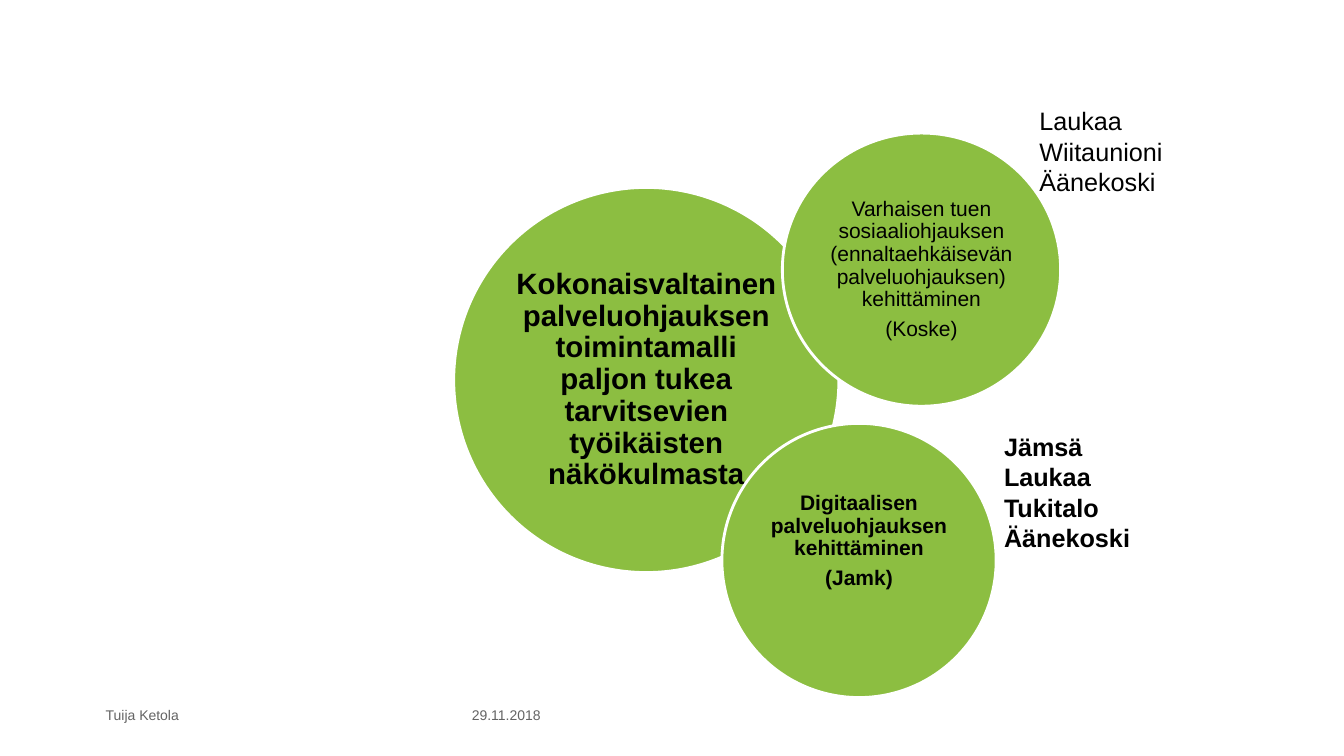
from pptx import Presentation
from pptx.dml.color import RGBColor
from pptx.enum.shapes import MSO_SHAPE
from pptx.enum.text import MSO_ANCHOR, PP_ALIGN
from pptx.util import Inches, Pt

FONT = "Arial"
COLORS = {"green": "8CBE41", "white": "FFFFFF", "black": "000000", "grey": "646464"}

# Circles: place (left, top, width, height), paragraphs, size, bold, inset, bottom inset
CIRCLES = [
    ((4.5, 1.86, 3.82, 3.82),
     ["Kokonaisvaltainen palveluohjauksen toimintamalli paljon tukea "
      "tarvitsevien työikäisten näkökulmasta"], 21, True, 0.03, 0.03),
    ((7.76, 1.32, 2.76, 2.71),
     ["Varhaisen tuen sosiaaliohjauksen (ennaltaehkäisevän palveluohjauksen) kehittäminen",
      "(Koske)"], 15, False, 0.02, 0.02),
    ((7.16, 4.2, 2.72, 2.72),
     ["Digitaalisen palveluohjauksen kehittäminen", "(Jamk)"], 15, True, 0.02, 0.4),
]

# Municipalities beside the circles: place, lines, bold
PLACES = [
    ((10.21, 1, 2.74, 1.01), ["Laukaa", "Wiitaunioni", "Äänekoski"], False),
    ((9.86, 4.23, 3.3, 1.31), ["Jämsä", "Laukaa", "Tukitalo", "Äänekoski"], True),
]

# Footer: place, text, alignment
FOOTER = [
    ((3.89, 6.9, 1.57, 0.39), "29.11.2018", PP_ALIGN.RIGHT),
    ((0.95, 6.9, 2.89, 0.39), "Tuija Ketola", PP_ALIGN.LEFT),
]


def rgb(name):
    return RGBColor.from_string(COLORS[name])


def write(shape, lines, size, color="black", bold=False, align=PP_ALIGN.LEFT,
          anchor=MSO_ANCHOR.TOP):
    tf = shape.text_frame
    tf.word_wrap = True
    tf.vertical_anchor = anchor
    tf.text = "\n".join(lines)
    for p in tf.paragraphs:
        p.alignment = align
        for r in p.runs:
            r.font.name = FONT
            r.font.size = Pt(size)
            r.font.bold = bold
            r.font.color.rgb = rgb(color)
    return tf


prs = Presentation()
prs.slide_width, prs.slide_height = Inches(13.33), Inches(7.5)
s = prs.slides.add_slide(prs.slide_layouts[6])

# Footer
for box, text, align in FOOTER:
    sp = s.shapes.add_textbox(*map(Inches, box))
    write(sp, [text], 10, "grey", align=align, anchor=MSO_ANCHOR.MIDDLE)

# Overlapping circles
for box, lines, size, bold, inset, bottom in CIRCLES:
    sp = s.shapes.add_shape(MSO_SHAPE.OVAL, *map(Inches, box))
    sp.shadow.inherit = False
    sp.fill.solid()
    sp.fill.fore_color.rgb = rgb("green")
    sp.line.color.rgb = rgb("white")
    sp.line.width = Pt(2)
    tf = write(sp, lines, size, bold=bold, align=PP_ALIGN.CENTER, anchor=MSO_ANCHOR.MIDDLE)
    tf.margin_left = tf.margin_right = tf.margin_top = Inches(inset)
    tf.margin_bottom = Inches(bottom)
    for p in tf.paragraphs:
        p.line_spacing = 0.9
        p.space_after = Pt(round(size * 0.35, 2))

# Municipalities
for box, lines, bold in PLACES:
    write(s.shapes.add_textbox(*map(Inches, box)), lines, 18, bold=bold)

prs.save("out.pptx")
